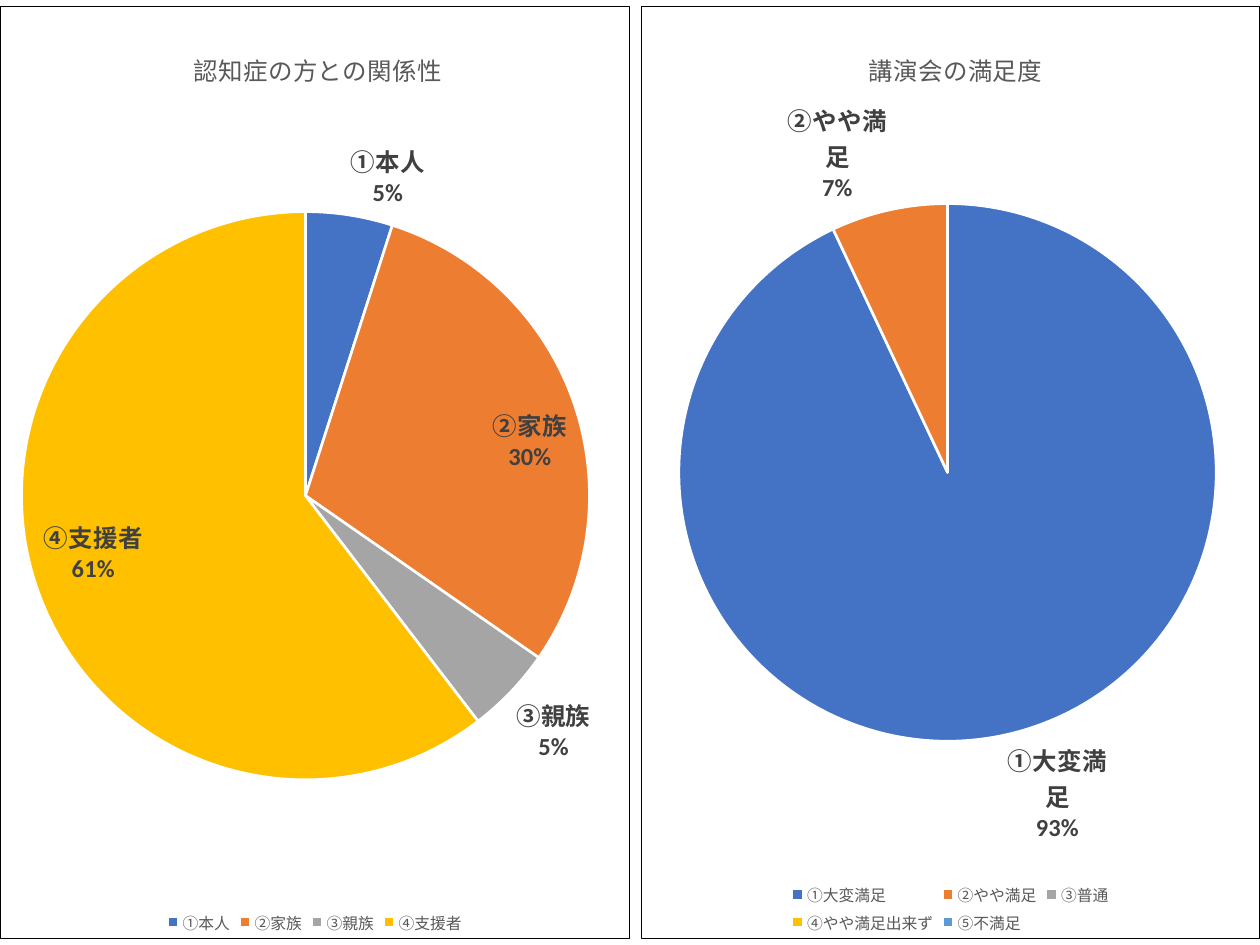
from lxml import etree
from pptx import Presentation
from pptx.chart.data import CategoryChartData
from pptx.dml.color import RGBColor
from pptx.enum.chart import XL_CHART_TYPE, XL_LABEL_POSITION, XL_LEGEND_POSITION
from pptx.oxml import parse_xml
from pptx.oxml.ns import nsdecls, qn
from pptx.util import Pt

PIE = XL_CHART_TYPE.PIE
LEGEND_BOTTOM = XL_LEGEND_POSITION.BOTTOM
OUTSIDE = XL_LABEL_POSITION.OUTSIDE_END
INSIDE = XL_LABEL_POSITION.INSIDE_END

FONT = "Calibri"
PERCENT_FORMAT = '0"%"'
COLOURS = {
    "blue": "4472C4", "orange": "ED7D31", "grey": "A5A5A5", "gold": "FFC000",
    "sky": "5B9BD5", "white": "FFFFFF", "black": "000000",
    "muted": "595959", "label": "404040",
}
SLICE_COLOURS = ["blue", "orange", "grey", "gold", "sky"]

CHARTS = [
    {
        "title": "認知症の方との関係性",
        "categories": ["①本人", "②家族", "③親族", "④支援者"],
        "values": [5, 30, 5, 61],
        "label_positions": [OUTSIDE, INSIDE, OUTSIDE, INSIDE],
        "left": 0, "width": 360,
        "title_layout": {"x": 0.3, "y": 0.04},
        "plot_layout": {"x": 0.03, "y": 0.22, "w": 0.91, "h": 0.61},
    },
    {
        "title": "講演会の満足度",
        "categories": ["①大変満足", "②やや満足", "③普通", "④やや満足出来ず", "⑤不満足"],
        "values": [93, 7, None, None, None],
        "label_positions": [OUTSIDE, OUTSIDE],
        "left": 366.5, "width": 353.5,
        "title_layout": {"x": 0.36, "y": 0.04},
        "plot_layout": {"x": 0.06, "y": 0.21, "w": 0.87, "h": 0.58},
    },
]
CHART_TOP, CHART_HEIGHT = 3.6, 532.8


def rgb(name):
    return RGBColor.from_string(COLOURS[name])


def format_font(font, size, colour, bold=False):
    font.name = FONT
    font.size = Pt(size)
    font.bold = bold
    font.color.rgb = rgb(colour)


def write_title(chart, text, **text_format):
    chart.has_title = True
    frame = chart.chart_title.text_frame
    frame.text = text
    format_font(frame.paragraphs[0].runs[0].font, **text_format)
    chart.chart_title.include_in_layout = False


def set_layout(element, index, target, fractions):
    for old_layout in element.findall(qn("c:layout")):
        element.remove(old_layout)
    layout = etree.Element(qn("c:layout"))
    manual = etree.SubElement(layout, qn("c:manualLayout"))
    if target:
        etree.SubElement(manual, qn("c:layoutTarget"), val=target)
    for axis in ("x", "y"):
        etree.SubElement(manual, qn(f"c:{axis}Mode"), val="edge")
    for key, fraction in fractions.items():
        etree.SubElement(manual, qn(f"c:{key}"), val=str(fraction))
    element.insert(index, layout)


def add_border(chart_space):
    border = parse_xml(
        f'<c:spPr {nsdecls("c", "a")}>'
        f'<a:solidFill><a:srgbClr val="{COLOURS["white"]}"/></a:solidFill>'
        f'<a:ln w="{Pt(0.5)}"><a:solidFill><a:srgbClr val="{COLOURS["black"]}"/>'
        '</a:solidFill></a:ln></c:spPr>'
    )
    chart_space.find(qn("c:chart")).addnext(border)


def label_slices(series, positions):
    labels = series.data_labels
    labels.show_value = True
    labels.show_category_name = True
    labels.show_percentage = False
    labels.number_format = PERCENT_FORMAT
    labels.number_format_is_linked = False
    format_font(labels.font, size=14, colour="label", bold=True)
    for index, position in enumerate(positions):
        label = series.points[index].data_label
        format_font(label.font, size=14, colour="label", bold=True)
        label.position = position
    group = series._element.find(qn("c:dLbls"))
    for element in group.findall(qn("c:dLbl")):
        number_format = etree.Element(
            qn("c:numFmt"), formatCode=PERCENT_FORMAT, sourceLinked="0")
        element.find(qn("c:idx")).addnext(number_format)
        element.find(qn("c:showCatName")).set("val", "1")
    for bubble_size in list(group.iter(qn("c:showBubbleSize"))):
        separator = etree.Element(qn("c:separator"))
        separator.text = "\n"
        bubble_size.addnext(separator)


def add_pie(slide, content):
    data = CategoryChartData()
    data.categories = content["categories"]
    data.add_series("Series 1", content["values"])
    chart = slide.shapes.add_chart(
        PIE, Pt(content["left"]), Pt(CHART_TOP),
        Pt(content["width"]), Pt(CHART_HEIGHT), data).chart
    format_font(chart.font, size=10, colour="black")
    write_title(chart, content["title"], size=14, colour="muted")

    chart.has_legend = True
    chart.legend.position = LEGEND_BOTTOM
    chart.legend.include_in_layout = False
    format_font(chart.legend.font, size=9, colour="muted")

    plot = chart.plots[0]
    plot.vary_by_categories = True
    series = plot.series[0]
    for index, _ in enumerate(content["categories"]):
        slice_format = series.points[index].format
        slice_format.fill.solid()
        slice_format.fill.fore_color.rgb = rgb(SLICE_COLOURS[index])
        slice_format.line.color.rgb = rgb("white")
        slice_format.line.width = Pt(1.5)
    label_slices(series, content["label_positions"])

    chart_space = chart._chartSpace
    set_layout(chart.chart_title._element, 1, None, content["title_layout"])
    set_layout(next(chart_space.iter(qn("c:plotArea"))), 0, "inner", content["plot_layout"])
    add_border(chart_space)


def main():
    presentation = Presentation()
    presentation.slide_width = Pt(720)
    presentation.slide_height = Pt(540)
    slide = presentation.slides.add_slide(presentation.slide_layouts[6])
    for content in CHARTS:
        add_pie(slide, content)
    presentation.save("out.pptx")


if __name__ == "__main__":
    main()
